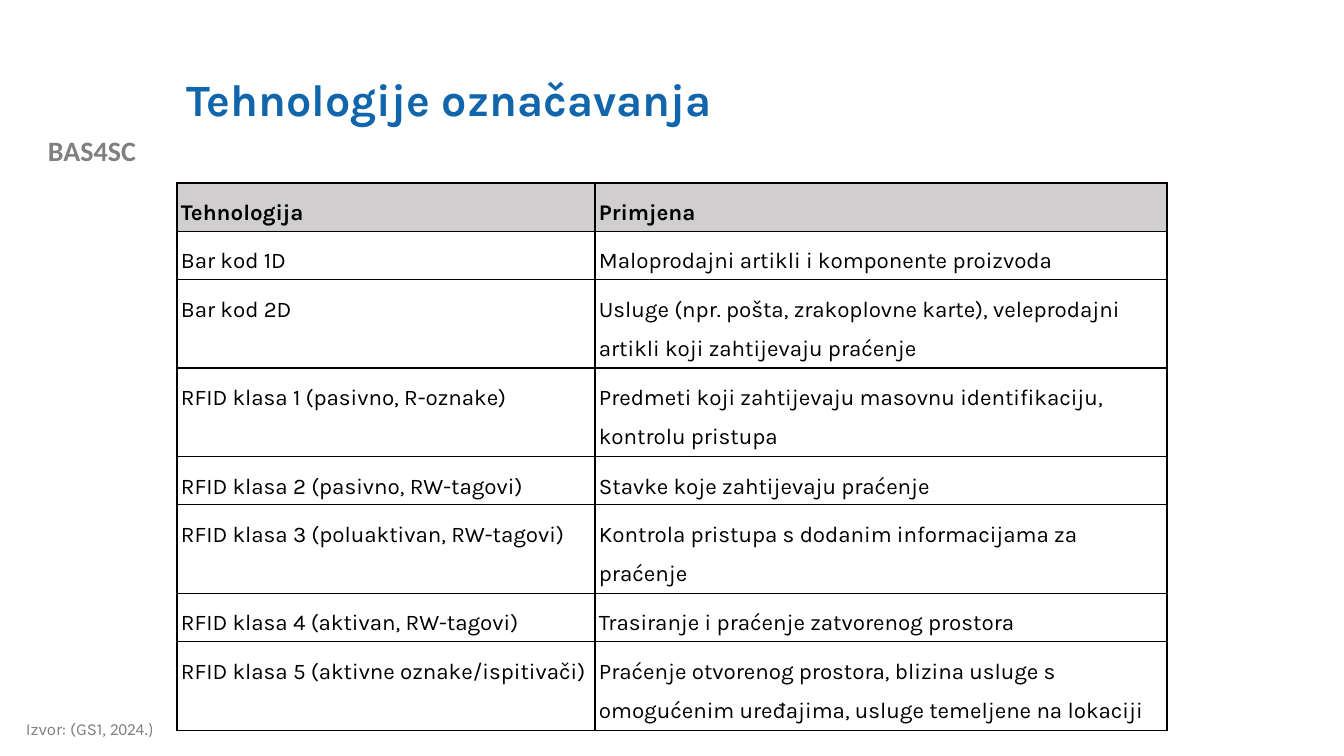
from lxml import etree
from pptx import Presentation
from pptx.dml.color import RGBColor
from pptx.enum.text import MSO_ANCHOR, PP_ALIGN
from pptx.oxml import parse_xml
from pptx.oxml.ns import nsdecls, qn
from pptx.util import Pt

PX = 914400 / 100.8
BLACK = RGBColor(0x00, 0x00, 0x00)
BLUE = RGBColor(0x10, 0x65, 0xAB)
GREY = RGBColor(0x80, 0x80, 0x80)
SOURCE_GREY = RGBColor(0x7F, 0x7F, 0x7F)
HEADER_GREY = RGBColor(0xD0, 0xCE, 0xCE)

TECHNOLOGIES = [
    ("Tehnologija", "Primjena"),
    ("Bar kod 1D", "Maloprodajni artikli i komponente proizvoda"),
    ("Bar kod 2D", "Usluge (npr. pošta, zrakoplovne karte), veleprodajni artikli koji zahtijevaju praćenje"),
    ("RFID klasa 1 (pasivno, R-oznake)", "Predmeti koji zahtijevaju masovnu identifikaciju, kontrolu pristupa"),
    ("RFID klasa 2 (pasivno, RW-tagovi)", "Stavke koje zahtijevaju praćenje"),
    ("RFID klasa 3 (poluaktivan, RW-tagovi)", "Kontrola pristupa s dodanim informacijama za praćenje"),
    ("RFID klasa 4 (aktivan, RW-tagovi)", "Trasiranje i praćenje zatvorenog prostora"),
    ("RFID klasa 5 (aktivne oznake/ispitivači)",
     "Praćenje otvorenog prostora, blizina usluge s omogućenim uređajima, usluge temeljene na lokaciji"),
]
COLUMN_WIDTHS = [418, 572]
ROW_HEIGHTS = [47, 47, 86, 86, 47, 86, 47, 86]


def px(length):
    return round(length * PX)


def add_run(paragraph, text, size, font, color, bold=False):
    run = paragraph.add_run()
    run.text = text
    for name, value in {"size": Pt(size), "name": font, "bold": bold}.items():
        setattr(run.font, name, value)
    run.font.color.rgb = color


presentation = Presentation()
presentation.slide_width = px(1344)
presentation.slide_height = px(756)
slide = presentation.slides.add_slide(presentation.slide_layouts[6])

# Project label, title and source line
texts = [
    ((0, 129, 184, 43), PP_ALIGN.CENTER, MSO_ANCHOR.TOP, 1.0,
     [("BAS4SC", 20, "Calibri", GREY, True)]),
    ((177, 40, 1075, 123), PP_ALIGN.LEFT, MSO_ANCHOR.MIDDLE, 0.9,
     [("Tehnologije označavanja", 32, "Karla", BLUE, True)]),
    ((16, 716, 505, 40), PP_ALIGN.LEFT, MSO_ANCHOR.TOP, 0.9,
     [("Izvor: (GS1, ", 12, "Karla", SOURCE_GREY), ("2024.)", 12, "Calibri", SOURCE_GREY)]),
]
for place, alignment, anchor, spacing, runs in texts:
    frame = slide.shapes.add_textbox(*map(px, place)).text_frame
    frame.word_wrap = True
    frame.vertical_anchor = anchor
    paragraph = frame.paragraphs[0]
    paragraph.alignment = alignment
    paragraph.line_spacing = spacing
    for run in runs:
        add_run(paragraph, *run)

# Technologies and their uses
table = slide.shapes.add_table(
    len(TECHNOLOGIES), len(COLUMN_WIDTHS), px(177), px(183),
    px(sum(COLUMN_WIDTHS)), px(sum(ROW_HEIGHTS))).table
table.first_row = table.horz_banding = False
for column, width in zip(table.columns, COLUMN_WIDTHS):
    column.width = px(width)

for row_index, (row, height) in enumerate(zip(table.rows, ROW_HEIGHTS)):
    row.height = px(height)
    is_header = row_index == 0
    for cell, text in zip(row.cells, TECHNOLOGIES[row_index]):
        for side in ("left", "top", "right", "bottom"):
            setattr(cell, f"margin_{side}", px(4))
        paragraph = cell.text_frame.paragraphs[0]
        paragraph.line_spacing = 1.5
        paragraph.space_after = Pt(6)
        add_run(paragraph, text, 16, "Karla", BLACK, is_header)
        properties = cell._tc.get_or_add_tcPr()
        for edge in ("lnL", "lnR", "lnT", "lnB"):
            border = parse_xml(f'<a:{edge} {nsdecls("a")} w="{Pt(1)}"><a:solidFill/></a:{edge}>')
            etree.SubElement(border[0], qn("a:srgbClr"), val=str(BLACK))
            properties.append(border)
        if is_header:
            cell.fill.solid()
            cell.fill.fore_color.rgb = HEADER_GREY
        else:
            cell.fill.background()

presentation.save("out.pptx")
